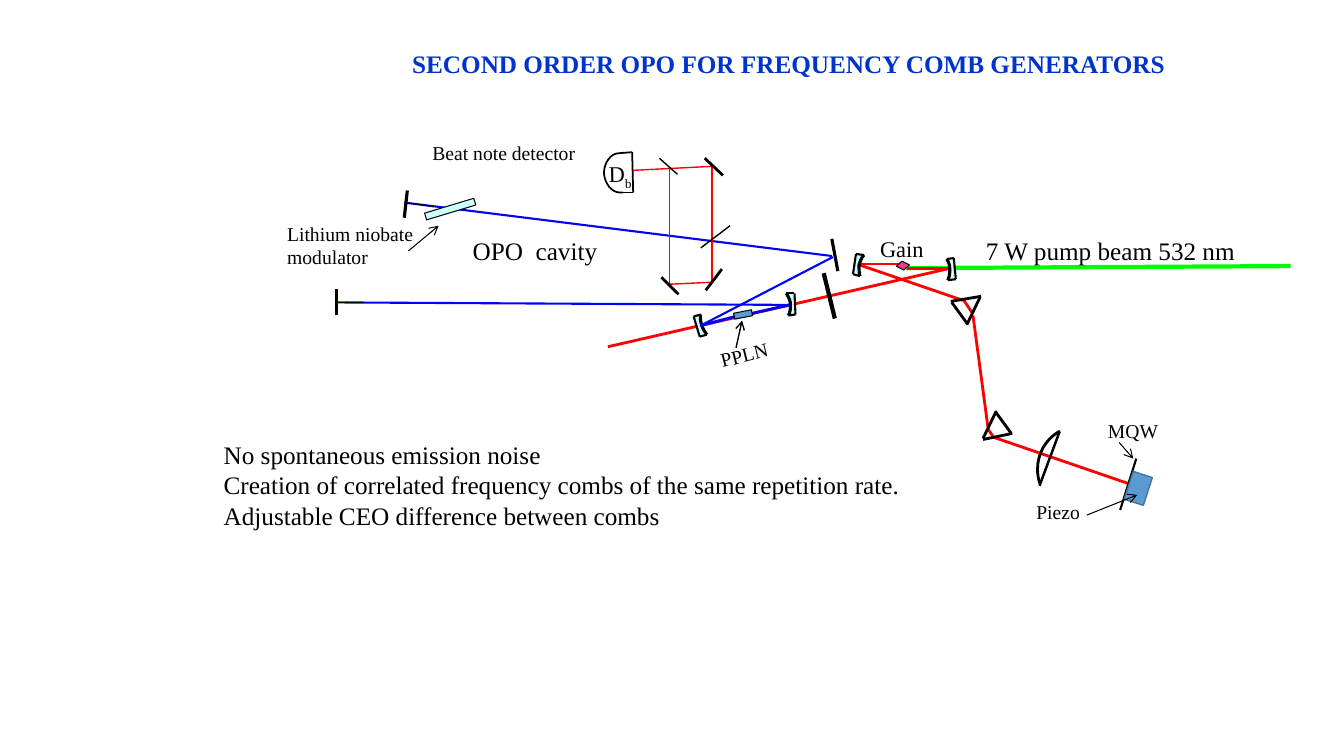
from dataclasses import dataclass

from lxml.etree import SubElement
from pptx import Presentation
from pptx.dml.color import RGBColor
from pptx.enum.shapes import MSO_CONNECTOR, MSO_SHAPE
from pptx.enum.text import PP_ALIGN
from pptx.oxml.ns import qn
from pptx.util import Pt

PX = 9144  # EMU in one px, 100 px to the inch
FONT = "Times New Roman"
HUES = {"black": "000000", "red": "FF0000", "green": "00FF00", "blue": "0000FF",
        "title": "0033CC", "glass": "CCFFFF", "pink": "FF3399",
        "steel": "5B9BD5", "edge": "43739E"}


@dataclass
class Line:
    ends: tuple[int, int, int, int]
    width: float
    hue: str = "black"
    arrow: bool = False


@dataclass
class Mirror:
    slab: tuple[int, int]
    turn: float
    curve: list[tuple[int, int]]
    back: list[tuple[int, int]]


@dataclass
class Block:
    box: tuple[int, int, int, int]
    turn: float
    fill: str
    edge: str = "black"
    width: float = 0.75
    kind: MSO_SHAPE = MSO_SHAPE.RECTANGLE


@dataclass
class Label:
    box: tuple[int, int, int, int]
    rows: list[str]
    size: int
    hue: str = "black"
    turn: int = 0
    wrap: bool = False
    mid: bool = False
    bold: bool = False
    sub: str = ""


deck = Presentation()
deck.slide_width, deck.slide_height = 1333 * PX, 750 * PX
shapes = deck.slides.add_slide(deck.slide_layouts[6]).shapes


def color(name: str) -> RGBColor:
    return RGBColor.from_string(HUES[name])


def stroke(item, width: float, hue: str) -> None:
    item.line.width = Pt(width)
    item.line.color.rgb = color(hue)


def draw_line(line: Line):
    link = shapes.add_connector(MSO_CONNECTOR.STRAIGHT, *(v * PX for v in line.ends))
    stroke(link, line.width, line.hue)
    if line.arrow:
        SubElement(link.line._get_or_add_ln(), qn("a:tailEnd"), type="arrow")
    SubElement(link._element.spPr, qn("a:effectLst"))
    return link


def draw_block(block: Block):
    item = shapes.add_shape(block.kind, *(v * PX for v in block.box))
    item.shadow.inherit = False
    item.rotation = block.turn
    item.fill.solid()
    item.fill.fore_color.rgb = color(block.fill)
    if block.edge:
        stroke(item, block.width, block.edge)
    else:
        item.line.fill.background()
    return item


def draw_curve(dots: list[tuple[int, int]], width: float) -> None:
    """Trace joined cubic curves through short steps."""
    trace = []
    for k in range(0, len(dots) - 1, 3):
        for step in range(1, 9):
            t = step / 8
            mix = ((1 - t) ** 3, 3 * t * (1 - t) ** 2, 3 * t * t * (1 - t), t ** 3)
            trace.append(tuple(PX * sum(m * dot[axis] for m, dot in zip(mix, dots[k:k + 4]))
                               for axis in (0, 1)))
    pen = shapes.build_freeform(dots[0][0] * PX, dots[0][1] * PX)
    pen.add_line_segments(trace, close=False)
    item = pen.convert_to_shape()
    item.shadow.inherit = False
    item.fill.background()
    stroke(item, width, "black")


def draw_mirror(part: Mirror):
    slab = draw_block(Block((*part.slab, 5, 21), part.turn, "glass", ""))
    draw_curve(part.curve, 2.25)
    top, foot = part.back
    for start, end in ((part.curve[0], top), (part.curve[-1], foot), (top, foot)):
        draw_line(Line((*start, *end), 1.5))
    return slab


def draw_label(label: Label) -> None:
    item = shapes.add_textbox(*(v * PX for v in label.box))
    item.rotation = label.turn
    frame = item.text_frame
    frame.word_wrap = label.wrap
    for k, row in enumerate(label.rows):
        para = frame.add_paragraph() if k else frame.paragraphs[0]
        para.alignment = PP_ALIGN.CENTER if label.mid else PP_ALIGN.LEFT
        for text in filter(None, (row, label.sub)):
            run = para.add_run()
            run.text = text
            run.font.name, run.font.size = FONT, Pt(label.size)
            run.font.bold = label.bold
            run.font.color.rgb = color(label.hue)
            if text == label.sub:
                run.font._element.set("baseline", "-25000")


# Pump beam and laser cavity beams
draw_line(Line((898, 266, 1280, 264), 3, "green"))
for ends in ((955, 298, 853, 263), (1120, 480, 986, 434), (956, 298, 964, 310),
             (980, 426, 985, 433), (965, 313, 980, 425), (943, 266, 603, 344),
             (900, 266, 943, 266), (853, 262, 892, 262)):
    draw_line(Line(ends, 2, "red"))

# Curved mirrors, the last one closing the OPO fold
MIRRORS = [
    Mirror((848, 253), 10, [(857, 253), (854, 256), (853, 260), (852, 263),
                            (852, 267), (852, 271), (853, 274)], [(849, 252), (846, 272)]),
    Mirror((941, 257), 354.9, [(939, 257), (941, 260), (942, 263), (942, 267),
                               (942, 271), (942, 274), (940, 278)], [(946, 256), (948, 277)]),
    Mirror((692, 313), 343, [(695, 312), (694, 315), (695, 319), (696, 323),
                             (697, 326), (699, 329), (701, 332)], [(688, 314), (694, 334)]),
    Mirror((783, 292), 355, [(780, 291), (782, 295), (784, 298), (784, 302),
                             (784, 306), (784, 309), (782, 313)], [(788, 291), (789, 312)]),
]
fold = [draw_mirror(part) for part in MIRRORS][-1]

# OPO beams
for x, y, width in ((741, 312, 2), (333, 300, 1.5)):
    draw_line(Line((x, y, 783, 302), width, "blue")).end_connect(fold, 1)
for ends, width in (((695, 323, 733, 313), 2), ((825, 254, 401, 201), 1.5),
                    ((695, 323, 826, 255), 1.5)):
    draw_line(Line(ends, width, "blue"))

# Beat note beams
for ends in ((706, 164, 706, 280), (664, 168, 664, 282),
             (664, 282, 706, 280), (628, 169, 707, 165)):
    draw_line(Line(ends, 1, "red"))

# Prisms, flat mirrors and splitters, by line width
PLATES = {
    3: [(828, 316, 817, 271)],
    2.25: [(334, 313, 334, 287), (825, 237, 831, 269), (401, 216, 404, 189)],
    2: [(943, 299, 973, 294), (959, 322, 972, 295), (944, 300, 960, 322),
        (1003, 430, 987, 408), (1004, 430, 975, 436), (988, 408, 975, 435),
        (716, 267, 700, 288), (656, 275, 673, 292), (699, 157, 717, 174)],
    1.75: [(1031, 482, 1051, 428)],
    1.5: [(1127, 455, 1111, 506)],
    1.25: [(614, 152, 627, 151), (615, 191, 628, 191), (628, 191, 627, 151)],
    1: [(695, 246, 724, 224), (654, 157, 672, 173)],
    0.75: [(335, 300, 361, 300), (402, 201, 430, 205)],
}
for width, group in PLATES.items():
    for ends in group:
        draw_line(Line(ends, width))

# Lens face and detector bowl
lens = shapes.add_shape(MSO_SHAPE.ARC, 1029 * PX, 423 * PX, 82 * PX, 85 * PX)
lens.shadow.inherit = False
lens.adjustments[0], lens.adjustments[1] = 95.847, 146.126
lens.fill.background()
stroke(lens, 2, "black")
draw_curve([(614, 152), (606, 152), (599, 161), (599, 172), (600, 183),
            (607, 191), (615, 191), (616, 191), (617, 191), (618, 191)], 1.25)

# Crystals, modulator and piezo
gain = draw_block(Block((890, 260, 11, 7), 26.2, "pink", kind=MSO_SHAPE.PARALLELOGRAM))
gain.adjustments[0] = 0.39
for block in (Block((1119, 470, 20, 29), 18, "steel", "edge", 1),
              Block((728, 309, 18, 6), 349, "steel"),
              Block((443, 182, 7, 51), 73.2, "glass")):
    draw_block(block)

# Pointers
for ends, width in (((1110, 439, 1124, 455), 0.75), ((1078, 511, 1128, 491), 0.75),
                    ((730, 345, 736, 318), 1), ((405, 249, 435, 224), 0.75)):
    draw_line(Line(ends, width, arrow=True))

# Wording
for label in (
    Label((399, 43, 770, 40), ["SECOND ORDER OPO FOR FREQUENCY COMB GENERATORS"],
          18, "title", bold=True),
    Label((863, 228, 63, 37), ["Gain"], 16, mid=True),
    Label((1089, 411, 70, 33), ["MQW"], 14),
    Label((968, 229, 268, 40), ["7 W pump beam 532 nm"], 18),
    Label((1018, 491, 63, 33), ["Piezo"], 14),
    Label((702, 335, 72, 33), ["PPLN"], 14, turn=346, wrap=True, mid=True),
    Label((593, 154, 44, 37), ["D"], 16, turn=359, mid=True, sub="b"),
    Label((419, 135, 162, 33), ["Beat note detector"], 14),
    Label((459, 229, 144, 40), ["OPO  cavity"], 18),
    Label((275, 215, 160, 57), ["Lithium niobate modulator"], 14, wrap=True),
    Label((212, 431, 707, 131), [
        "No spontaneous emission noise",
        "Creation of correlated frequency combs of the same repetition rate.",
        "Adjustable CEO difference between combs"], 18, wrap=True),
):
    draw_label(label)

deck.save("out.pptx")
